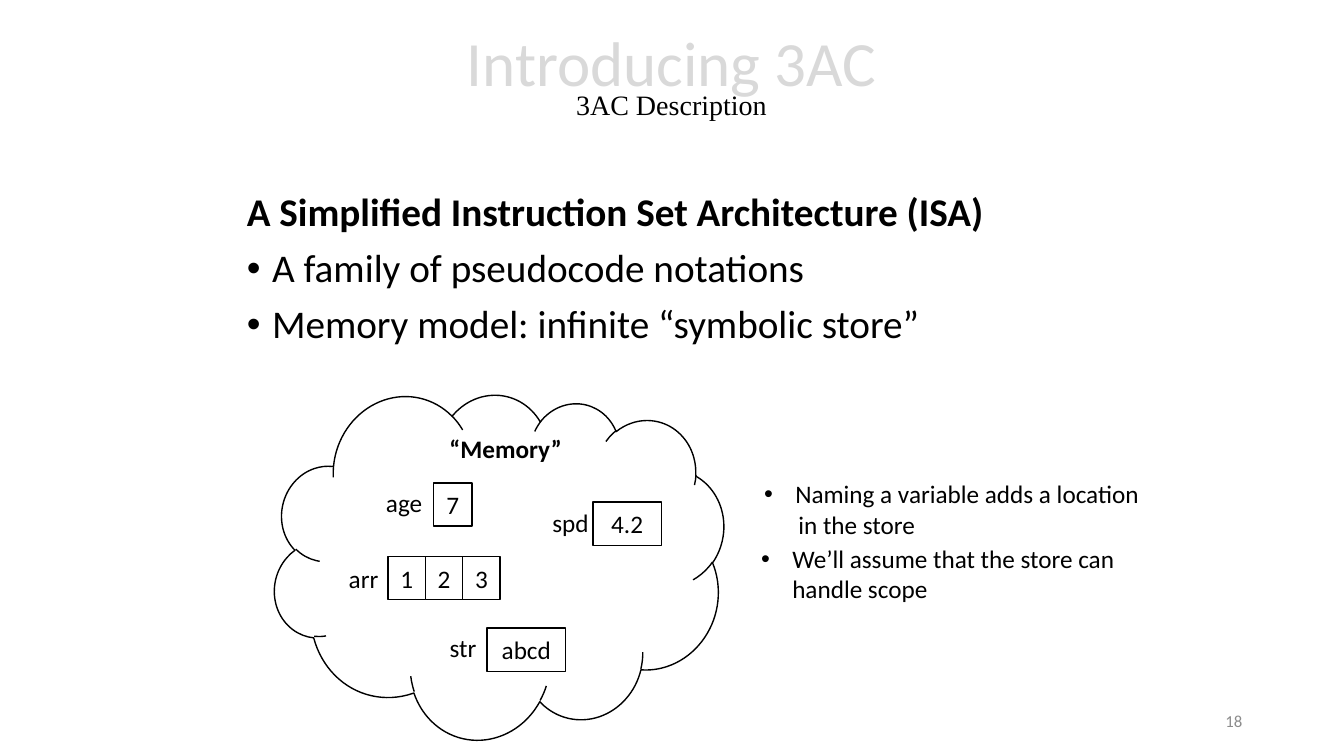
from pptx import Presentation
from pptx import util as u
from pptx.dml.color import RGBColor
from pptx.enum import shapes, text
from pptx.oxml import parse_xml
from pptx.oxml.ns import nsdecls

COLS, ROWS = 13.33, 7.5
CELL = u.Inches(1)
BLACK, WHITE = "000000", "FFFFFF"
LEFT, MID, RIGHT = text.PP_ALIGN.LEFT, text.PP_ALIGN.CENTER, text.PP_ALIGN.RIGHT
TOP, HALF = text.MSO_ANCHOR.TOP, text.MSO_ANCHOR.MIDDLE


def color(code):
    return RGBColor.from_string(code)


def grid(*cells):
    return [int(n * CELL) for n in cells]


def style(run, size=18, code=BLACK, bold=False, face="Calibri"):
    font = run.font
    font.size, font.bold, font.name = u.Pt(size), bold, face
    font.color.rgb = color(code)


def indent(para, left, bullet=True):
    props = para._p.get_or_add_pPr()
    props.set("marL", str(int(left * CELL)))
    if bullet:
        props.set("indent", str(int(-left * CELL)))
        props.append(parse_xml(f'<a:buFont {nsdecls("a")} typeface="Arial"/>'))
        props.append(parse_xml(f'<a:buChar {nsdecls("a")} char="•"/>'))


def label(slide, box, words, align=LEFT, anchor=TOP, **look):
    frame = slide.shapes.add_textbox(*grid(*box)).text_frame
    frame.word_wrap, frame.vertical_anchor = True, anchor
    frame.text = words
    for para in frame.paragraphs:
        para.alignment = align
        for run in para.runs:
            style(run, **look)
    return frame


def block(slide, kind, box, line=BLACK, words=""):
    shape = slide.shapes.add_shape(kind, *grid(*box))
    shape.shadow.inherit = False
    shape.fill.solid()
    shape.fill.fore_color.rgb = color(WHITE)
    shape.line.color.rgb = color(line)
    shape.line.width = u.Pt(1)
    if words:
        frame = shape.text_frame
        frame.text, frame.vertical_anchor = words, HALF
        frame.paragraphs[0].alignment = MID
        style(frame.paragraphs[0].runs[0])
    return shape


def header(slide, box):
    frame = label(slide, box, "Introducing 3AC\v3AC Description", MID, HALF)
    para = frame.paragraphs[0]
    para.line_spacing = 0.7
    style(para.runs[0], 45, "D9D9D9")
    style(para.runs[1], 20, face="Times New Roman")


def body(slide, box):
    lines = ["A Simplified Instruction Set Architecture (ISA)",
             "A family of pseudocode notations",
             "Memory model: infinite “symbolic store”"]
    frame = label(slide, box, "\n".join(lines), size=28)
    for para in frame.paragraphs:
        para.line_spacing, para.space_before = 0.9, u.Pt(10)
    head, *items = frame.paragraphs
    head.runs[0].font.bold = True
    for item in items:
        indent(item, 0.25)


def store(slide, name, x, y, start, width, values, drop=0):
    for i, value in enumerate(values):
        block(slide, shapes.MSO_SHAPE.RECTANGLE,
              (start + i * width, y, width, 0.43), words=value)
    label(slide, (x, y + drop, 0.65, 0.4), name)


def memory(slide, box):
    x, y, _, _ = box
    cloud = block(slide, shapes.MSO_SHAPE.CLOUD, box)
    cloud.rotation = 13.1
    block(slide, shapes.MSO_SHAPE.RECTANGLE, (x + 3, y + 1.83, 0.95, 0.78), WHITE)
    label(slide, (x + 1.63, y + 0.4, 1.4, 0.4), "“Memory”", bold=True)
    store(slide, "age", x + 1, y + 0.94, x + 1.57, 0.38, ["7"])
    store(slide, "str", x + 1.63, y + 2.38, x + 2.1, 0.78, ["abcd"], -0.01)
    store(slide, "spd", x + 2.65, y + 1.13, x + 3.15, 0.68, ["4.2"])
    store(slide, "arr", x + 0.63, y + 1.67, x + 1.12, 0.37, ["1", "2", "3"], 0.02)


def notes(slide, box):
    x, y, w, h = box
    first = label(slide, (x + 0.03, y, w, h),
                  "Naming a variable adds a location\nin the store")
    indent(first.paragraphs[0], 0.31)
    indent(first.paragraphs[1], 0.34, False)
    second = label(slide, (x, y + 0.64, w, h),
                   "We’ll assume that the store can handle scope")
    indent(second.paragraphs[0], 0.31)


def main():
    deck = Presentation()
    deck.slide_width, deck.slide_height = grid(COLS, ROWS)
    slide = deck.slides.add_slide(deck.slide_layouts[6])
    memory(slide, (2.73, 3.85, 4.42, 3.5))
    header(slide, (2.35, 0.09, 8.62, 1.45))
    body(slide, (2.35, 1.86, 8.62, 1.8))
    notes(slide, (7.45, 4.7, 3.96, 0.71))
    label(slide, (9.42, 6.95, 3, 0.4), "18", RIGHT, HALF, size=12, code="8C8C8C")
    deck.save("out.pptx")


if __name__ == "__main__":
    main()
